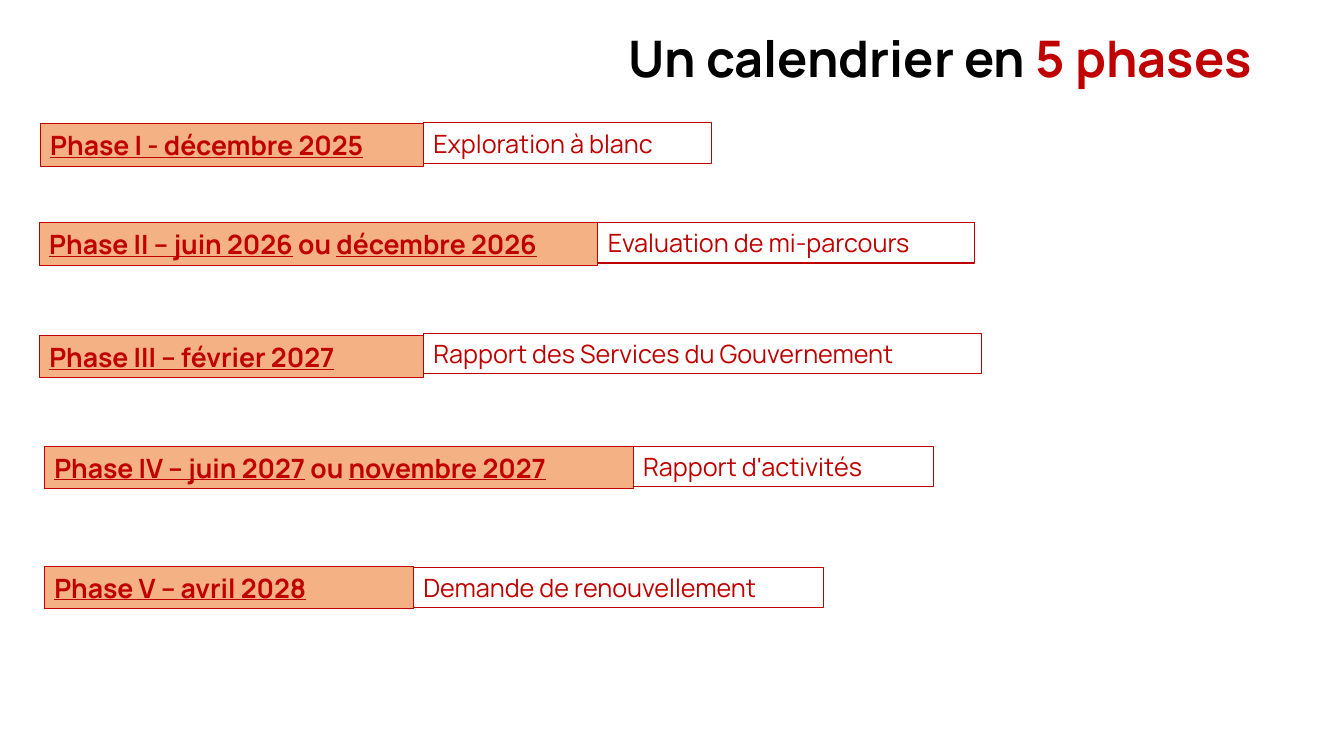
from pptx import Presentation
from pptx import util as u
from pptx.dml.color import RGBColor
from pptx.enum import text

RED = RGBColor(0xC0, 0x00, 0x00)
BLACK = RGBColor(0, 0, 0)
PEACH = RGBColor(0xF4, 0xB1, 0x83)

WIDE, HIGH = 13.33, 7.5
TITLE = [("Un calendrier en ", {"color": BLACK}), ("5 phases", {"color": RED})]
LINK = {"underline": True}
PLAIN = {"underline": False}
PHASES = [
    (0.4, 1.23, 3.8, [("Phase I - décembre 2025", LINK)],
     1.22, 2.86, "Exploration à blanc"),
    (0.39, 2.21, 5.54, [("Phase II – juin 2026", LINK), (" ou ", PLAIN),
                        ("décembre 2026", LINK)],
     2.21, 3.74, "Evaluation de mi-parcours"),
    (0.39, 3.33, 3.81, [("Phase III – février 2027", LINK)],
     3.31, 5.54, "Rapport des Services du Gouvernement"),
    (0.44, 4.43, 5.84, [("Phase IV – juin 2027", LINK), (" ou ", PLAIN),
                        ("novembre 2027", LINK)],
     4.43, 2.98, "Rapport d'activités"),
    (0.44, 5.62, 3.66, [("Phase V – avril 2028", LINK)],
     5.63, 4.07, "Demande de renouvellement"),
]
DATE = {"size": u.Pt(19), "bold": True}
STEP = {"size": u.Pt(18), "bold": False}
HEAD = {"size": u.Pt(36), "bold": True}


def write(par, runs, base):
    for words, extra in runs:
        run = par.add_run()
        run.text = words
        form = {"name": "Manrope", "color": RED, **base, **extra}
        run.font.color.rgb = form.pop("color")
        for key, val in form.items():
            setattr(run.font, key, val)


def add_box(slide, area, runs, base, fill=None):
    box = slide.shapes.add_textbox(*map(u.Inches, area))
    box.line.color.rgb = RED
    box.line.width = u.Pt(0.75)
    if fill is not None:
        box.fill.solid()
        box.fill.fore_color.rgb = fill
    frame = box.text_frame
    frame.word_wrap = True
    frame.auto_size = text.MSO_AUTO_SIZE.SHAPE_TO_FIT_TEXT
    write(frame.paragraphs[0], runs, base)


def main():
    deck = Presentation()
    deck.slide_width, deck.slide_height = u.Inches(WIDE), u.Inches(HIGH)
    slide = deck.slides.add_slide(deck.slide_layouts[5])

    title = slide.shapes.title
    area = zip(("left", "top", "width", "height"), (6.13, 0.14, 6.87, 0.79))
    for key, val in area:
        setattr(title, key, u.Inches(val))
    frame = title.text_frame
    frame.auto_size = text.MSO_AUTO_SIZE.NONE
    frame.vertical_anchor = text.MSO_ANCHOR.BOTTOM
    par = frame.paragraphs[0]
    par.alignment = text.PP_ALIGN.LEFT
    par.line_spacing = 0.9
    write(par, TITLE, HEAD)

    for left, top, width, date, high, span, step in PHASES:
        add_box(slide, (left, top, width, 0.42), date, DATE, PEACH)
        add_box(slide, (left + width, high, span, 0.4), [(step, {})], STEP)

    deck.save("out.pptx")


if __name__ == "__main__":
    main()
